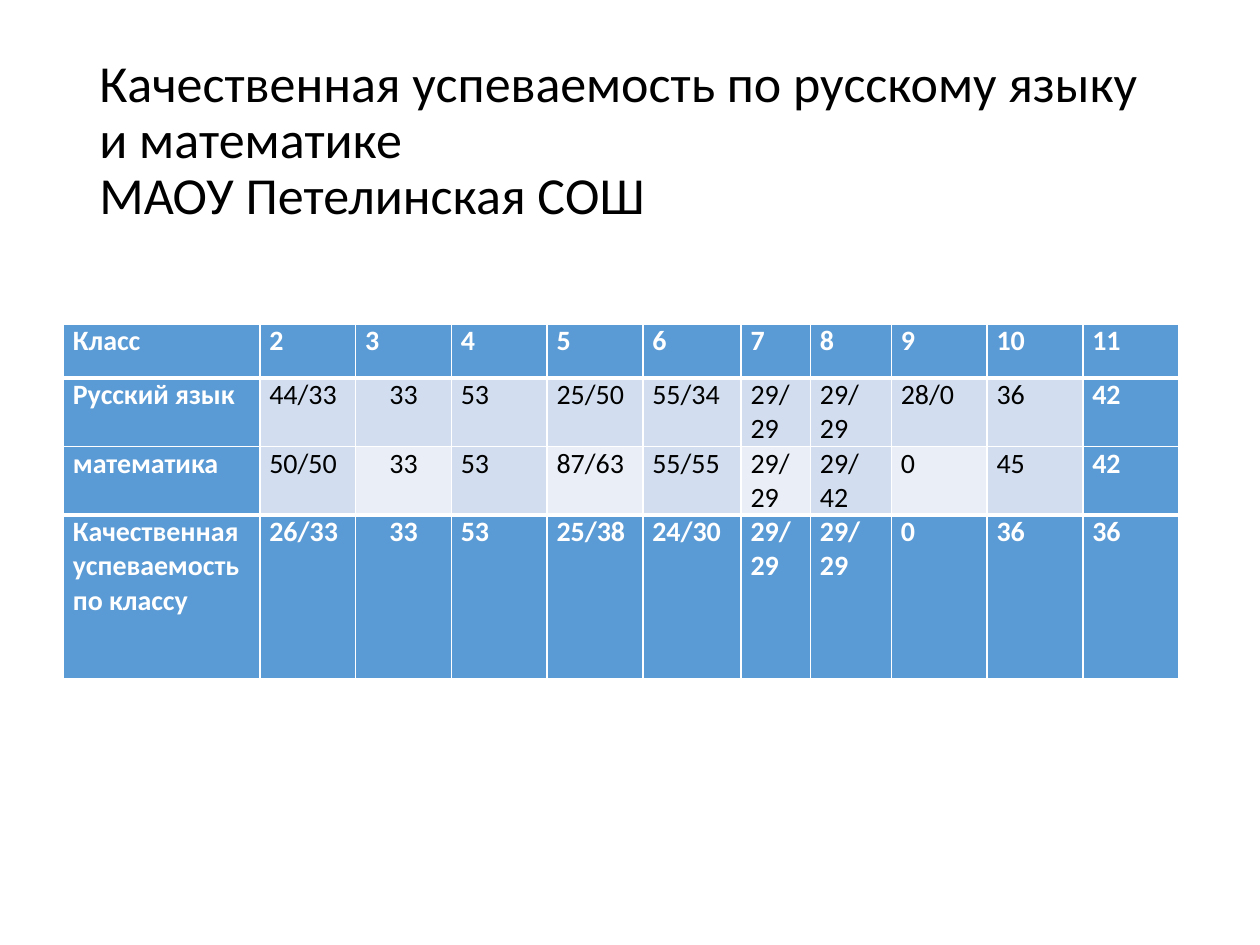
import copy

import pptx
import pptx.dml.color
import pptx.enum.text
import pptx.oxml
import pptx.oxml.ns
import pptx.util
from pptx.util import Cm

RGBColor = pptx.dml.color.RGBColor
PP_ALIGN = pptx.enum.text.PP_ALIGN
qn = pptx.oxml.ns.qn

BLACK = RGBColor(0x00, 0x00, 0x00)
WHITE = RGBColor(0xFF, 0xFF, 0xFF)
BLUE = RGBColor(0x5B, 0x9B, 0xD5)
BAND = RGBColor(0xD2, 0xDE, 0xEF)
LIGHT_BAND = RGBColor(0xEA, 0xEF, 0xF7)

TITLE = "Качественная успеваемость по русскому языку и математике\vМАОУ Петелинская СОШ"
GRADES = [
    ["Класс", "2", "3", "4", "5", "6", "7", "8", "9", "10", "11"],
    ["Русский язык", "44/33", "33", "53", "25/50", "55/34", "29/29", "29/\n29",
     "28/0", "36", "42"],
    ["математика", "50/50", "33", "53", "87/63", "55/55", "29/29", "29/\n42",
     "0", "45", "42"],
    ["Качественная успеваемость по классу", "26/33", "33", "53", "25/38", "24/30",
     "29/\n29", "29/\n29", "0", "36", "36"],
]
COLUMN_WIDTHS = [3.96] + [1.93] * 4 + [1.98, 1.4, 1.63] + [1.93] * 3
ROW_HEIGHTS = [1.09] * 3 + [3.3]
CENTRED_COLUMN = 2


def write_text(tf, text, size=16, color=BLACK, bold=False, align=PP_ALIGN.LEFT,
               line_spacing=None):
    """Fill tf: a newline starts a paragraph, a vertical tab breaks a line."""
    tf.text = text
    for p in tf.paragraphs:
        p.alignment = align
        p.line_spacing = line_spacing
        for r in p.runs:
            r.font.name = "Calibri"
            r.font.size = pptx.util.Pt(size)
            r.font.bold = bold
            r.font.color.rgb = color
        for br in p._p.findall(qn("a:br")):
            br.append(copy.deepcopy(p.runs[0].font._element))


def set_borders(cell, widths):
    """Draw white borders; widths are points for left, right, top, bottom."""
    tc_pr = cell._tc.get_or_add_tcPr()
    for i, (side, width) in enumerate(zip("LRTB", widths)):
        ln = pptx.oxml.parse_xml(
            f'<a:ln{side} {pptx.oxml.ns.nsdecls("a")} w="{pptx.util.Pt(width)}">'
            f'<a:solidFill><a:srgbClr val="{WHITE}"/></a:solidFill></a:ln{side}>')
        tc_pr.insert(i, ln)


def add_title(s, left, top, width, height):
    sp = s.shapes.title
    sp.left, sp.top, sp.width, sp.height = left, top, width, height
    tf = sp.text_frame
    tf.word_wrap = True
    tf.auto_size = pptx.enum.text.MSO_AUTO_SIZE.NONE
    tf.vertical_anchor = pptx.enum.text.MSO_ANCHOR.MIDDLE
    write_text(tf, TITLE, size=29.7, line_spacing=0.9)


def format_cell(cell, text, row, col):
    last_row, last_col = len(GRADES) - 1, len(GRADES[0]) - 1
    strong = row in (0, last_row) or col in (0, last_col)
    if strong:
        fill = BLUE
    else:
        fill = LIGHT_BAND if row == 2 and col % 2 == 0 else BAND
    cell.fill.solid()
    cell.fill.fore_color.rgb = fill
    cell.margin_left = cell.margin_right = Cm(0.19)
    cell.margin_top = cell.margin_bottom = 0
    centred = row > 0 and col == CENTRED_COLUMN
    write_text(cell.text_frame, text, color=WHITE if strong else BLACK, bold=strong,
               align=PP_ALIGN.CENTER if centred else PP_ALIGN.LEFT)
    set_borders(cell, (1, 1, 3 if row in (1, last_row) else 1,
                       3 if row in (0, last_row - 1) else 1))


def add_grades_table(s, left, top):
    table = s.shapes.add_table(
        len(GRADES), len(GRADES[0]), left, top,
        Cm(sum(COLUMN_WIDTHS)), Cm(sum(ROW_HEIGHTS))).table
    for column, width in zip(table.columns, COLUMN_WIDTHS):
        column.width = Cm(width)
    for row, height in zip(table.rows, ROW_HEIGHTS):
        row.height = Cm(height)
    for row, texts in enumerate(GRADES):
        for col, text in enumerate(texts):
            format_cell(table.cell(row, col), text, row, col)


def main():
    prs = pptx.Presentation()
    prs.slide_width, prs.slide_height = Cm(25.4), Cm(19.05)
    s = prs.slides.add_slide(prs.slide_layouts.get_by_name("Title Only"))
    add_title(s, Cm(1.75), Cm(1.02), Cm(21.9), Cm(3.68))
    add_grades_table(s, Cm(1.28), Cm(6.53))
    prs.save("out.pptx")


if __name__ == "__main__":
    main()
